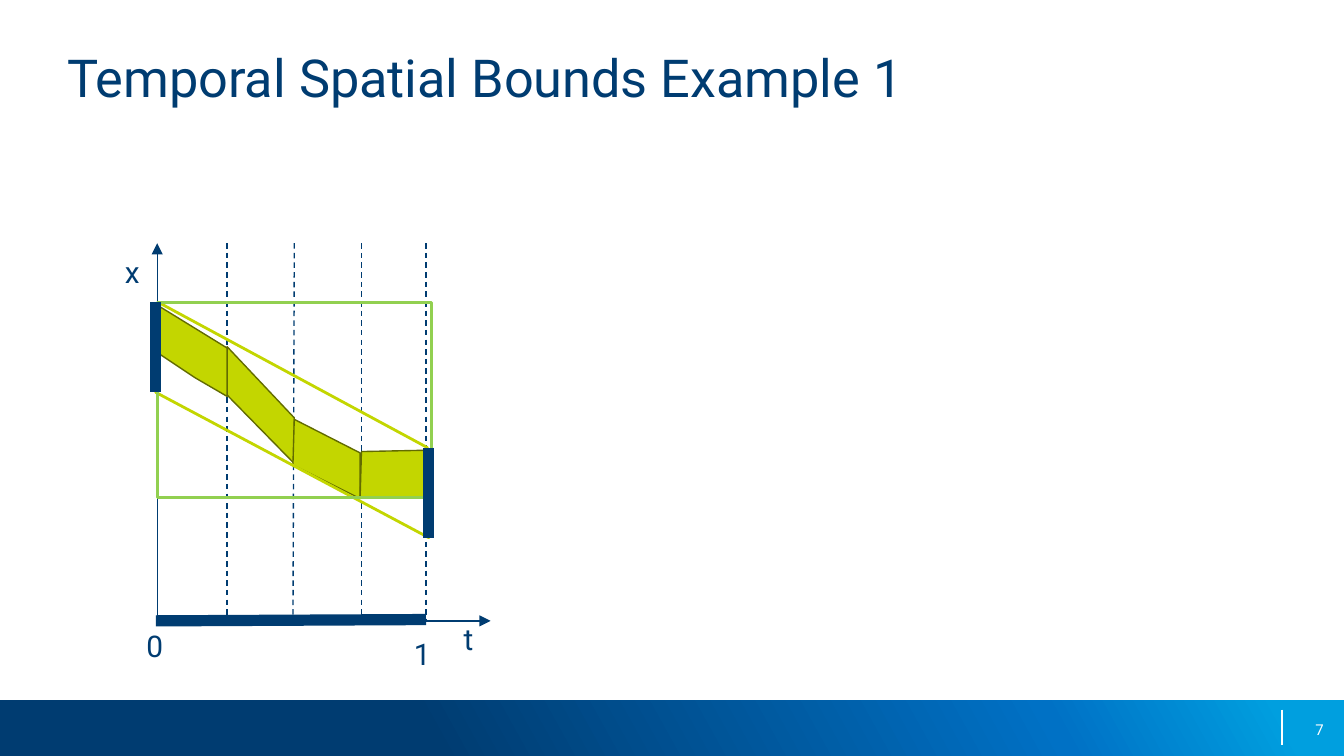
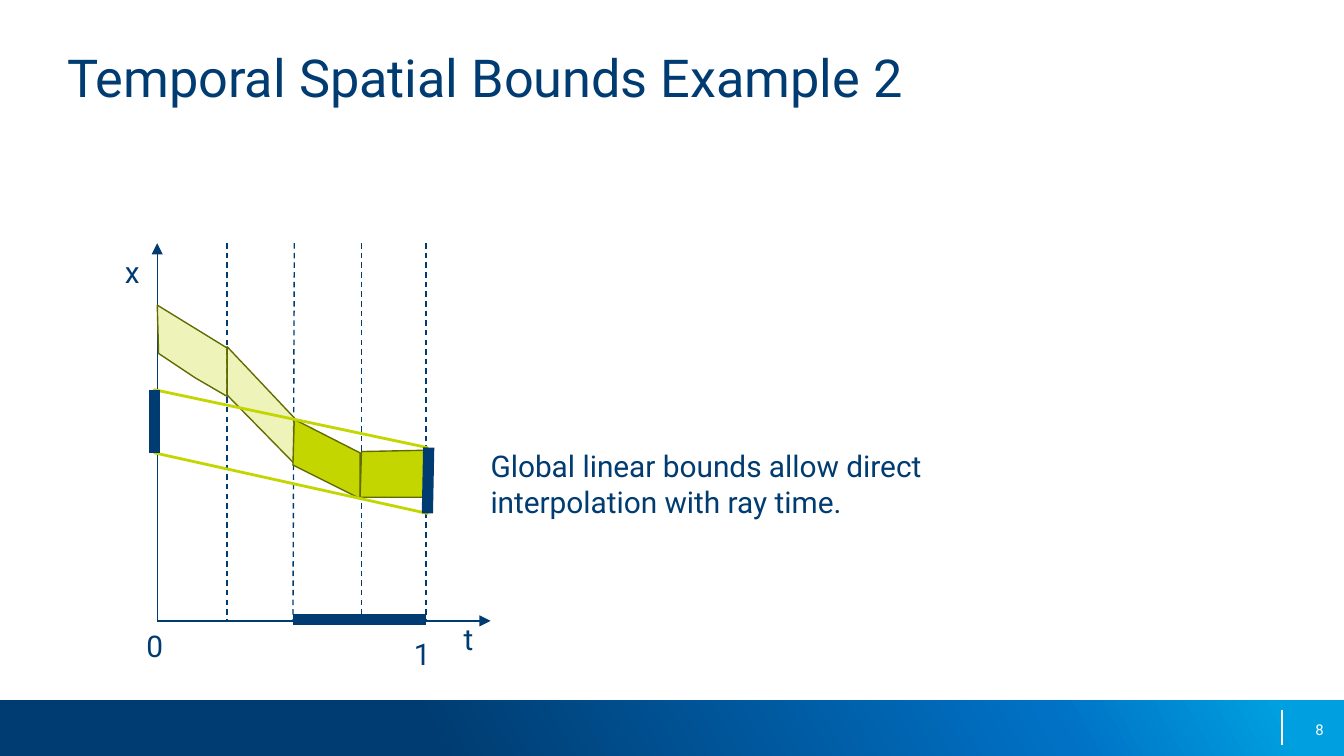
"""Build two slides showing temporal spatial bounds of a moving primitive."""
from copy import deepcopy

from lxml.etree import SubElement
from pptx import Presentation
from pptx.dml.color import RGBColor
from pptx.enum.dml import MSO_LINE
from pptx.enum.shapes import MSO_CONNECTOR, MSO_SHAPE
from pptx.enum.text import MSO_ANCHOR, PP_ALIGN
from pptx.oxml.ns import qn
from pptx.util import Inches, Pt

NAVY, WHITE = "003C71", "FFFFFF"
LIME, OLIVE, GREEN = "C3D600", "626B00", "92D050"
GRADIENT = [(0.32, NAVY), (0.78, "0071C5"), (0.95, "009FDF")]
FONT = "Roboto"

AXIS_X, AXIS_Y, AXIS_TOP, AXIS_END = 1.17, 4.62, 1.81, 3.65
TIME_STEPS = [(1.69, 1.69), (2.19, 2.18), (2.69, 2.69), (3.17, 3.17)]
LABELS = [("t", 3.45, 4.62, 0.08), ("x", 0.93, 1.89, 0.11),
          ("0", 1.09, 4.67, 0.13), ("1", 3.08, 4.73, 0.13)]
SEGMENTS = [
    [(1.69, 2.58), (1.69, 2.94), (2.19, 3.45), (2.19, 3.11)],
    [(2.19, 3.12), (2.18, 3.46), (2.68, 3.71), (2.68, 3.37)],
    [(2.69, 3.36), (2.68, 3.7), (3.18, 3.7), (3.18, 3.35)],
    [(1.17, 2.27), (1.18, 2.63), (1.45, 2.81), (1.69, 2.95), (1.69, 2.59)],
]
SLIDES = [
    {
        "title": "Temporal Spatial Bounds Example 1",
        "number": "7",
        "faded": [],
        "bounds": [(1.18, 2.25), (1.16, 2.92), (3.19, 4), (3.18, 3.33)],
        "box": (1.17, 2.25, 2.04, 1.45),
        "bars": [(1.16, 2.25, 1.16, 2.92), (3.19, 3.33, 3.19, 4), (1.16, 4.62, 3.17, 4.61)],
        "note": None,
    },
    {
        "title": "Temporal Spatial Bounds Example 2",
        "number": "8",
        "faded": [0, 3],
        "bounds": [(1.15, 2.9), (1.15, 3.37), (3.18, 3.82), (3.18, 3.33)],
        "box": None,
        "bars": [(1.15, 2.9, 1.15, 3.37), (3.19, 3.33, 3.18, 3.82), (2.18, 4.61, 3.17, 4.61)],
        "note": "Global linear bounds allow direct interpolation with ray time.",
    },
]


def add_line(s, x1, y1, x2, y2, color=NAVY, width=0.75, dash=None, arrow=False):
    cx = s.shapes.add_connector(
        MSO_CONNECTOR.STRAIGHT, Inches(x1), Inches(y1), Inches(x2), Inches(y2))
    cx.line.color.rgb = RGBColor.from_string(color)
    cx.line.width = Pt(width)
    if dash:
        cx.line.dash_style = dash
    if arrow:
        SubElement(cx._element.spPr.find(qn("a:ln")), qn("a:tailEnd"), type="triangle")
    SubElement(cx._element.spPr, qn("a:effectLst"))


def add_text(s, text, x, y, w, h, size=16, color=NAVY, wrap=True):
    sp = s.shapes.add_textbox(Inches(x), Inches(y), Inches(w), Inches(h))
    tf = sp.text_frame
    tf.margin_left = tf.margin_top = tf.margin_right = tf.margin_bottom = 0
    tf.word_wrap = wrap
    tf.text = text
    font = tf.paragraphs[0].runs[0].font
    font.name = FONT
    font.size = Pt(size)
    font.color.rgb = RGBColor.from_string(color)
    return tf


prs = Presentation()
prs.slide_width = Inches(10)
prs.slide_height = prs.slide_width * 9 // 16

for content in SLIDES:
    s = prs.slides.add_slide(prs.slide_layouts[6])

    band = s.shapes.add_shape(MSO_SHAPE.RECTANGLE, 0, Inches(5.21), Inches(10), Inches(0.42))
    band.shadow.inherit = False
    band.line.fill.background()
    band.fill.gradient()
    band.fill.gradient_angle = 29
    stops = band._element.spPr.find(qn("a:gradFill")).find(qn("a:gsLst"))
    stops.append(deepcopy(stops[-1]))
    for stop, (position, color) in zip(band.fill.gradient_stops, GRADIENT):
        stop.position = position
        stop.color.rgb = RGBColor.from_string(color)
    add_line(s, 9.54, 5.28, 9.54, 5.54, WHITE)
    tf = add_text(s, content["number"], 7.52, 5.28, 2.33, 0.3, 8, WHITE)
    tf.vertical_anchor = MSO_ANCHOR.MIDDLE
    tf.paragraphs[0].alignment = PP_ALIGN.RIGHT
    add_text(s, content["title"], 0.5, 0.34, 9, 0.95, 28)

    for top_x, bottom_x in TIME_STEPS:
        add_line(s, top_x, AXIS_TOP, bottom_x, AXIS_Y, dash=MSO_LINE.DASH)
    add_line(s, AXIS_X, AXIS_Y, AXIS_X, AXIS_TOP, arrow=True)
    add_line(s, AXIS_X, AXIS_Y, AXIS_END, AXIS_Y, arrow=True)

    for i, points in enumerate(SEGMENTS + [content["bounds"]]):
        corners = [(Inches(x), Inches(y)) for x, y in points]
        fb = s.shapes.build_freeform(*corners[0])
        fb.add_line_segments(corners[1:], close=True)
        sp = fb.convert_to_shape()
        sp.shadow.inherit = False
        is_segment = i < len(SEGMENTS)
        sp.line.color.rgb = RGBColor.from_string(OLIVE if is_segment else LIME)
        sp.line.width = Pt(0.75 if is_segment else 1.5)
        if is_segment:
            sp.fill.solid()
            sp.fill.fore_color.rgb = RGBColor.from_string(LIME)
        else:
            sp.fill.background()
        if i in content["faded"]:
            clr = sp._element.spPr.find(qn("a:solidFill"))[0]
            SubElement(clr, qn("a:alpha"), val="27000")

    if content["box"]:
        sp = s.shapes.add_shape(MSO_SHAPE.RECTANGLE, *map(Inches, content["box"]))
        sp.shadow.inherit = False
        sp.fill.background()
        sp.line.color.rgb = RGBColor.from_string(GREEN)
        sp.line.width = Pt(1.5)

    for bar in content["bars"]:
        add_line(s, *bar, width=6)
    for text, x, y, w in LABELS:
        add_text(s, text, x, y, w, 0.27, wrap=False)
    if content["note"]:
        add_text(s, content["note"], 3.65, 3.33, 3.97, 0.54)

prs.save("out.pptx")
